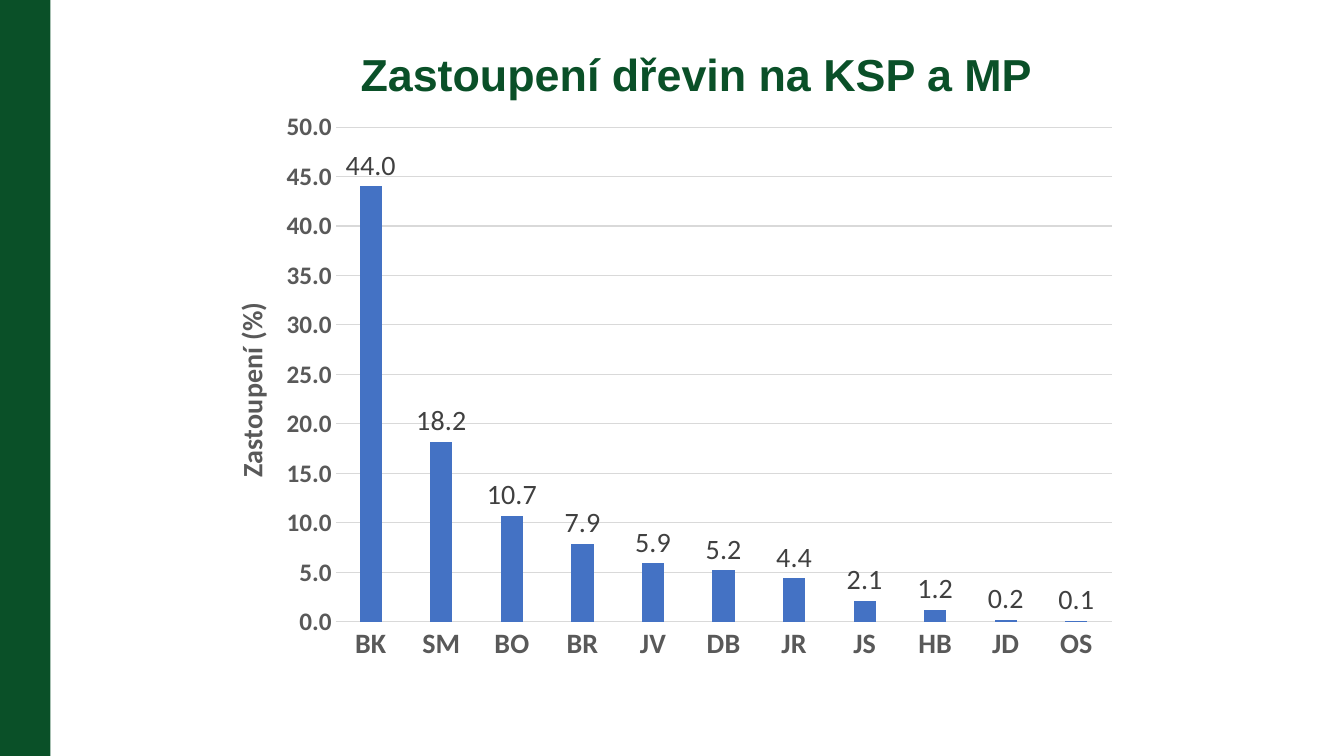
from lxml.etree import SubElement
from pptx import Presentation
from pptx.chart.data import CategoryChartData
from pptx.dml.color import RGBColor
from pptx.enum.chart import XL_CHART_TYPE, XL_LABEL_POSITION, XL_TICK_MARK
from pptx.enum.shapes import MSO_SHAPE
from pptx.enum.text import PP_ALIGN
from pptx.oxml.ns import qn
from pptx.util import Inches, Pt

GREEN = RGBColor(0x0A, 0x50, 0x28)
BLUE = RGBColor(0x44, 0x72, 0xC4)
BLACK = RGBColor(0x00, 0x00, 0x00)
DARK_GREY = RGBColor(0x40, 0x40, 0x40)
GREY = RGBColor(0x59, 0x59, 0x59)
LIGHT_GREY = RGBColor(0xD9, 0xD9, 0xD9)

TREE_SHARES = {
    "BK": 44, "SM": 18.2, "BO": 10.7, "BR": 7.9, "JV": 5.9, "DB": 5.2,
    "JR": 4.4, "JS": 2.1, "HB": 1.2, "JD": 0.2, "OS": 0.1,
}


def set_font(font, color, **values):
    font.color.rgb = color
    for name, value in values.items():
        setattr(font, name, value)


def set_line(line, color):
    line.color.rgb = color
    line.width = Pt(0.75)


def set_layout(layout, **values):
    """Fill a c:layout element with a manual layout, as fractions of the chart."""
    manual = SubElement(layout, qn("c:manualLayout"))
    for name, value in values.items():
        SubElement(manual, qn(f"c:{name}")).set("val", str(value))


def add_side_band(page, height):
    band = page.shapes.add_shape(MSO_SHAPE.RECTANGLE, 0, 0, Inches(0.5), height)
    band.shadow.inherit = False
    band.fill.solid()
    band.fill.fore_color.rgb = GREEN
    band.line.fill.background()


def add_title(page, text):
    box = page.shapes.add_textbox(Inches(0.97), Inches(0.46), Inches(11.88), Inches(0.68))
    frame = box.text_frame
    frame.word_wrap = True
    for side in ("left", "top", "right", "bottom"):
        setattr(frame, f"margin_{side}", 0)
    para = frame.paragraphs[0]
    para.alignment = PP_ALIGN.CENTER
    span = para.add_run()
    span.text = text
    set_font(span.font, GREEN, name="Arial", size=Pt(32), bold=True)


def format_category_axis(axis):
    axis.major_tick_mark = XL_TICK_MARK.NONE
    set_line(axis.format.line, LIGHT_GREY)
    set_font(axis.tick_labels.font, GREY, name="Calibri", size=Pt(20), bold=True)


def format_value_axis(axis, title):
    axis.minimum_scale, axis.maximum_scale, axis.major_unit = 0, 50, 5
    axis.major_tick_mark = XL_TICK_MARK.NONE
    axis.format.line.fill.background()
    set_line(axis.major_gridlines.format.line, LIGHT_GREY)
    axis.tick_labels.number_format = "0.0"
    axis.tick_labels.number_format_is_linked = False
    set_font(axis.tick_labels.font, GREY, name="Calibri", size=Pt(18), bold=True)
    span = axis.axis_title.text_frame.paragraphs[0].add_run()
    span.text = title
    set_font(span.font, GREY, name="Calibri", size=Pt(20), bold=True)


def format_columns(plot):
    plot.gap_width = 219
    plot.overlap = -27
    plot.vary_by_categories = False
    series = plot.series[0]
    series.format.fill.solid()
    series.format.fill.fore_color.rgb = BLUE
    labels = series.data_labels
    labels.show_value = True
    labels.position = XL_LABEL_POSITION.OUTSIDE_END
    labels.number_format = "#,##0.0"
    labels.number_format_is_linked = False
    set_font(labels.font, DARK_GREY, name="Calibri", size=Pt(20), bold=False)


def place_plot_and_title(chart):
    plot_area = chart.plots[0]._element.getparent()
    for layout in plot_area.findall(qn("c:layout")):
        plot_area.remove(layout)
    layout = SubElement(plot_area, qn("c:layout"))
    plot_area.insert(0, layout)
    set_layout(layout, layoutTarget="inner", xMode="edge", yMode="edge",
               x=0.147, y=0.046, w=0.833, h=0.866)
    title_layout = plot_area.find(f".//{qn('c:title')}/{qn('c:layout')}")
    set_layout(title_layout, xMode="edge", yMode="edge", x=0.03, y=0.344)


def add_share_chart(page):
    data = CategoryChartData()
    data.categories = list(TREE_SHARES)
    data.add_series("Series 1", list(TREE_SHARES.values()))
    chart = page.shapes.add_chart(
        XL_CHART_TYPE.COLUMN_CLUSTERED,
        Inches(1.97), Inches(1), Inches(9.24), Inches(5.67), data,
    ).chart
    chart.has_title = False
    chart.has_legend = False
    set_font(chart.font, BLACK, name="Arial", size=Pt(10))
    format_category_axis(chart.category_axis)
    format_value_axis(chart.value_axis, "Zastoupení (%)")
    format_columns(chart.plots[0])
    place_plot_and_title(chart)


def main():
    deck = Presentation()
    deck.slide_width, deck.slide_height = Inches(13.33), Inches(7.5)
    page = deck.slides.add_slide(deck.slide_layouts[6])
    add_side_band(page, deck.slide_height)
    add_title(page, "Zastoupení dřevin na KSP a MP")
    add_share_chart(page)
    deck.save("out.pptx")


if __name__ == "__main__":
    main()
